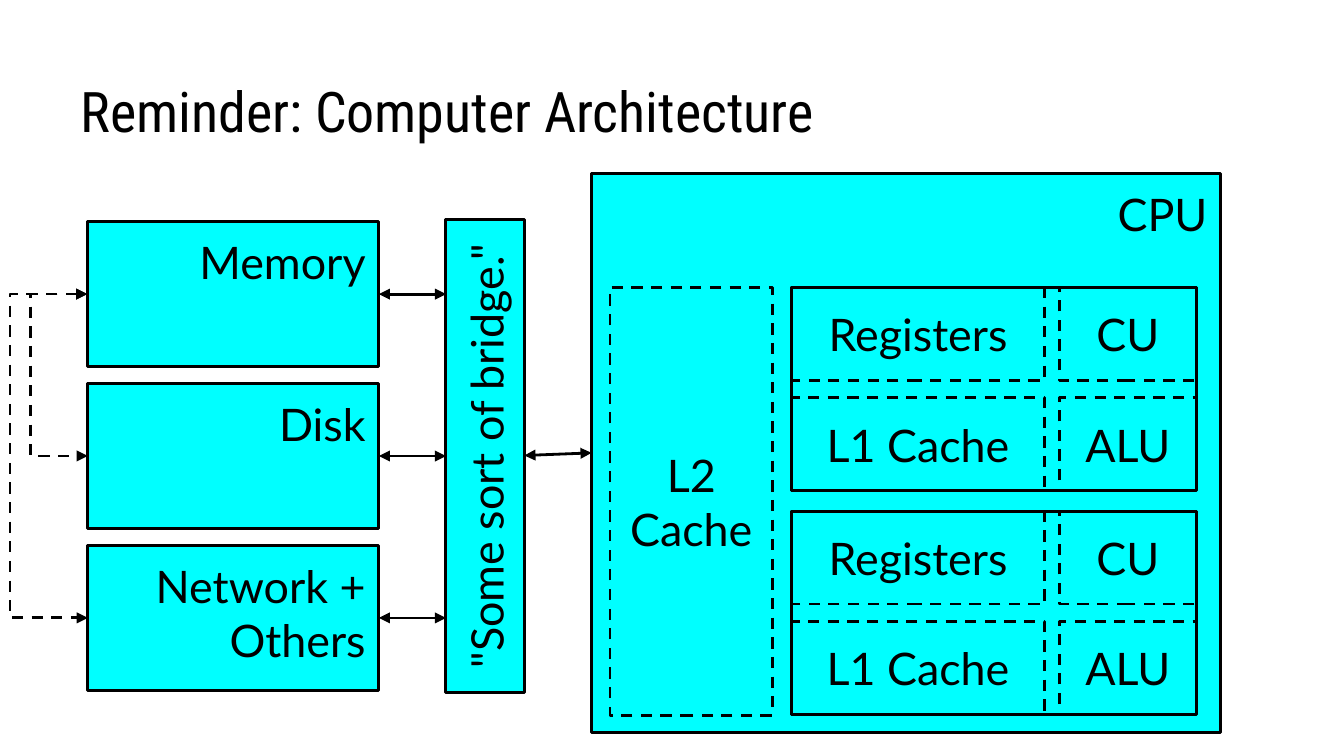
"""Build a slide of a computer architecture block diagram."""
from typing import NamedTuple

from lxml import etree
from pptx import Presentation
from pptx.dml.color import RGBColor
from pptx.enum import dml, shapes, text
from pptx.oxml.ns import qn
from pptx.util import Cm, Pt

COLORS = {"ink": "000000", "block": "00FFFF"}
LEFT, CENTER, RIGHT = text.PP_ALIGN.LEFT, text.PP_ALIGN.CENTER, text.PP_ALIGN.RIGHT
TOP, MIDDLE, BOTTOM = text.MSO_ANCHOR.TOP, text.MSO_ANCHOR.MIDDLE, text.MSO_ANCHOR.BOTTOM
FRAME = {"word_wrap": True, "margin_left": Cm(0.25), "margin_right": Cm(0.25),
         "margin_top": Cm(0.25), "margin_bottom": Cm(0.25)}
TITLE_FONT = {"name": "Roboto Condensed", "size": Pt(30)}
BODY_FONT = {"name": "Lato", "size": Pt(24)}


class Block(NamedTuple):
    label: str
    x: float
    y: float
    w: float
    h: float
    align: text.PP_ALIGN = CENTER
    anchor: text.MSO_ANCHOR = MIDDLE
    dashed: bool = True
    filled: bool = True
    rotation: float = 0


class Link(NamedTuple):
    x1: float
    y1: float
    x2: float
    y2: float
    reach: float = 0


def rgb(name: str) -> RGBColor:
    return RGBColor.from_string(COLORS[name])


def set_all(obj, values: dict) -> None:
    for name, value in values.items():
        setattr(obj, name, value)


def write(sp, label: str, font: dict, align, anchor) -> None:
    tf = sp.text_frame
    set_all(tf, {**FRAME, "vertical_anchor": anchor, "text": label})
    for p in tf.paragraphs:
        p.alignment = align
        for r in p.runs:
            set_all(r.font, font)
            r.font.color.rgb = rgb("ink")


def outline(sp, dashed: bool) -> None:
    sp.line.color.rgb = rgb("ink")
    sp.line.width = Pt(1.5)
    if dashed:
        sp.line.dash_style = dml.MSO_LINE.DASH


def draw_block(s, block: Block) -> None:
    sp = s.shapes.add_shape(shapes.MSO_SHAPE.RECTANGLE, Cm(block.x), Cm(block.y),
                            Cm(block.w), Cm(block.h))
    sp.shadow.inherit = False
    sp.rotation = block.rotation
    if block.filled:
        sp.fill.solid()
        sp.fill.fore_color.rgb = rgb("block")
    else:
        sp.fill.background()
    outline(sp, block.dashed)
    if block.label:
        write(sp, block.label, BODY_FONT, block.align, block.anchor)


def draw_link(s, link: Link) -> None:
    kind = shapes.MSO_CONNECTOR.ELBOW if link.reach else shapes.MSO_CONNECTOR.STRAIGHT
    sp = s.shapes.add_connector(kind, Cm(link.x1), Cm(link.y1), Cm(link.x2), Cm(link.y2))
    outline(sp, bool(link.reach))
    ln = sp.line._get_or_add_ln()
    for end in ("a:headEnd", "a:tailEnd"):
        etree.SubElement(ln, qn(end), type="triangle")
    etree.SubElement(sp._element.spPr, qn("a:effectLst"))
    if link.reach:
        ratio = -link.reach / (link.x2 - link.x1)
        guides = sp._element.spPr.find(qn("a:prstGeom")).get_or_add_avLst()
        etree.SubElement(guides, qn("a:gd"), name="adj1", fmla=f"val {round(ratio * 100000)}")


def core_parts(x: float, y: float) -> list[Block]:
    rows = (("Registers", "CU"), ("L1 Cache", "ALU"))
    columns = ((0, 4.78), (5.06, 2.59))
    return [Block(label, x + dx, y + row * 2.08, w, 1.75)
            for row, labels in enumerate(rows)
            for label, (dx, w) in zip(labels, columns)]


def main() -> None:
    prs = Presentation()
    prs.slide_width, prs.slide_height = Cm(25.4), Cm(14.29)
    s = prs.slides.add_slide(prs.slide_layouts[6])
    title = s.shapes.add_textbox(Cm(1.27), Cm(0.58), Cm(22.86), Cm(2.39))
    write(title, "Reminder: Computer Architecture", TITLE_FONT, LEFT, BOTTOM)

    devices = ("Memory", "Disk", "Network + Others")
    tops = [4.19 + 3.06 * i for i in range(len(devices))]
    mids = [top + 1.37 for top in tops]
    cores = [(14.96, 5.44), (14.96, 9.67)]

    blocks = [Block("CPU", 11.18, 3.28, 11.89, 10.57, RIGHT, TOP, False)]
    blocks += [Block(label, 1.65, top, 5.51, 2.74, RIGHT, TOP, False)
               for label, top in zip(devices, tops)]
    blocks.append(Block('"Some sort of bridge."', 4.7, 7.87, 8.94, 1.5,
                        CENTER, TOP, False, rotation=270))
    blocks.append(Block("L2\nCache", 11.53, 5.44, 3.07, 8.08))
    for x, y in cores:
        blocks += core_parts(x, y)
    blocks += [Block("", x, y, 7.65, 3.84, dashed=False, filled=False) for x, y in cores]
    for block in blocks:
        draw_block(s, block)

    links = [Link(9.91, 8.61, 11.18, 8.56)]
    links += [Link(7.16, mid, 8.43, mid) for mid in mids]
    links += [Link(1.65, mids[0], 1.66, mids[2], 1.46),
              Link(1.65, mids[0], 1.66, mids[1], 1.07)]
    for link in links:
        draw_link(s, link)
    prs.save("out.pptx")


if __name__ == "__main__":
    main()
